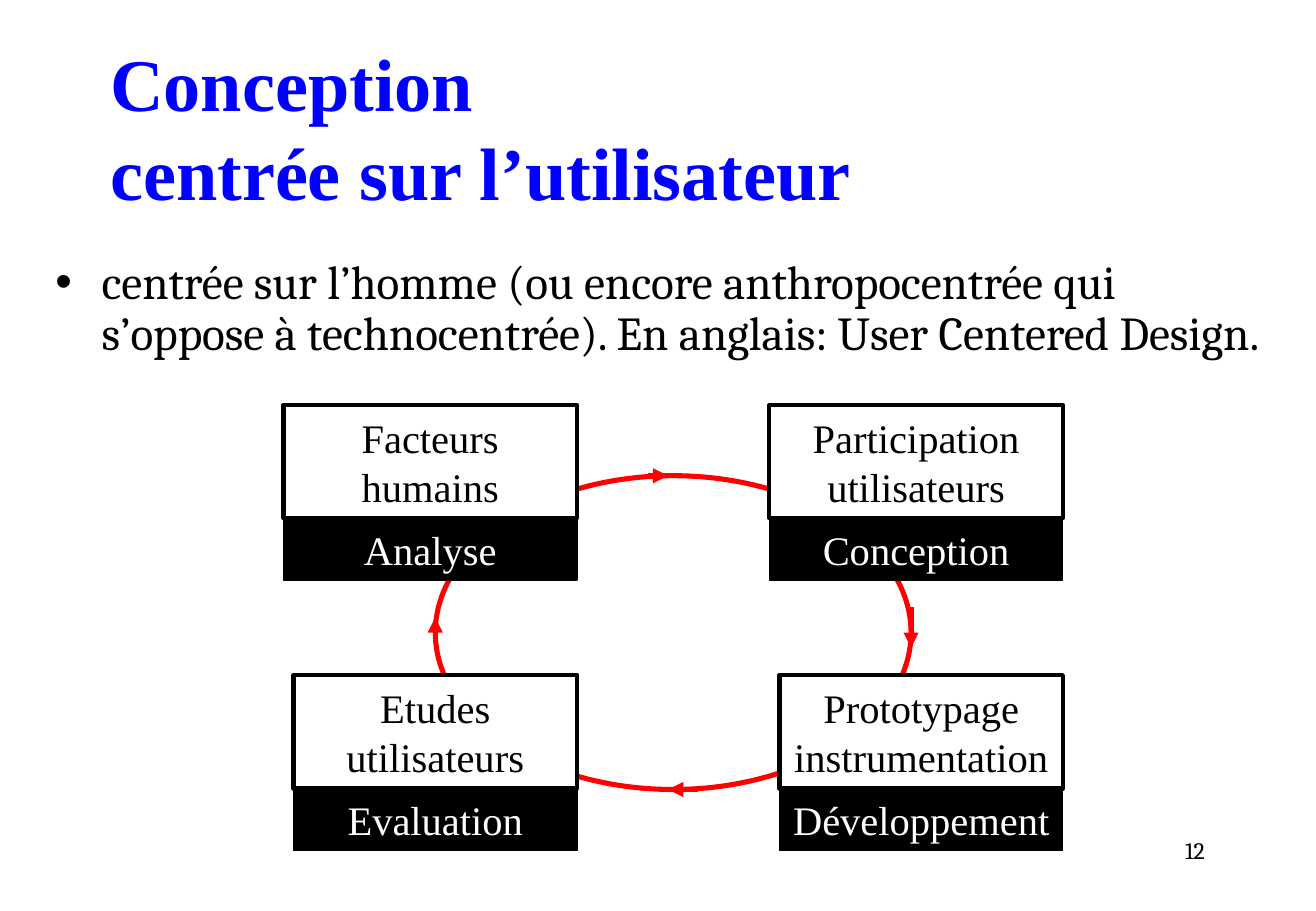
from lxml import etree
from pptx import Presentation
from pptx import util as u
from pptx.dml.color import RGBColor
from pptx.enum import shapes, text
from pptx.oxml.ns import qn

SERIF, BODY = "Times New Roman", "Cambria"
BLACK, WHITE, BLUE, RED = "000000", "FFFFFF", "0000FF", "FF0000"
COLUMNS, ROWS = 130, 90


def colour(value):
    return RGBColor.from_string(value)


class Page:
    """A slide laid out on a grid of COLUMNS by ROWS square cells."""

    def __init__(self, deck):
        self.slide = deck.slides.add_slide(deck.slide_layouts[6])
        self.column = deck.slide_width / COLUMNS
        self.row = deck.slide_height / ROWS

    def place(self, *cells):
        """Turn alternating columns and rows into lengths."""
        units = (self.column, self.row) * (len(cells) // 2)
        return [u.Emu(round(cell * unit)) for cell, unit in zip(cells, units)]

    def set_words(self, shape, words, size, font, ink, align, bold=False):
        frame = shape.text_frame
        frame.word_wrap = True
        frame.text = words
        for para in frame.paragraphs:
            para.alignment = align
            for span in para.runs:
                span.font.size = u.Pt(size)
                span.font.name = font
                span.font.bold = bold
                span.font.color.rgb = colour(ink)
        return frame

    def text(self, cells, words, size, font, ink=BLACK,
             align=text.PP_ALIGN.LEFT, bold=False):
        box = self.slide.shapes.add_textbox(*self.place(*cells))
        return self.set_words(box, words, size, font, ink, align, bold)

    def shape(self, kind, cells, line, width, fill=None):
        shape = self.slide.shapes.add_shape(kind, *self.place(*cells))
        shape.shadow.inherit = False
        if fill:
            shape.fill.solid()
            shape.fill.fore_color.rgb = colour(fill)
        else:
            shape.fill.background()
        shape.line.color.rgb = colour(line)
        shape.line.width = u.Pt(width)
        return shape

    def label(self, cells, words, fill, ink, width):
        box = self.shape(shapes.MSO_SHAPE.RECTANGLE, cells, BLACK, width, fill)
        frame = self.set_words(box, words, 24, SERIF, ink, text.PP_ALIGN.CENTER)
        frame.vertical_anchor = text.MSO_ANCHOR.MIDDLE
        frame.margin_left = frame.margin_right = u.Inches(0.05)

    def stage(self, left, top, width, activity, phase):
        """A white activity box standing on its black phase label."""
        height = 11.2
        self.label((left, top + height, width, 6.1), phase, BLACK, WHITE, 0.75)
        self.label((left, top, width, height), activity, WHITE, BLACK, 2.5)

    def arrow(self, *cells):
        connector = self.slide.shapes.add_connector(
            shapes.MSO_CONNECTOR.STRAIGHT, *self.place(*cells))
        connector.line.color.rgb = colour(RED)
        connector.line.width = u.Pt(3)
        properties = connector._element.spPr
        etree.SubElement(properties.find(qn("a:ln")), qn("a:tailEnd"), type="triangle")
        etree.SubElement(properties, qn("a:effectLst"))

    def bullet(self, para, indent):
        properties = para._p.get_or_add_pPr()
        properties.set("marL", str(u.Inches(indent)))
        properties.set("indent", str(-u.Inches(indent)))
        etree.SubElement(properties, qn("a:buFont"), typeface="Arial")
        etree.SubElement(properties, qn("a:buChar"), char="•")


def main():
    deck = Presentation()
    deck.slide_width, deck.slide_height = u.Inches(10.83), u.Inches(7.5)
    page = Page(deck)

    page.text((93.1, 82, 27.1, 6), "12", 14, BODY, align=text.PP_ALIGN.RIGHT)
    title = page.text((9.7, 5, 117.3, 15), "Conception \vcentrée sur l’utilisateur",
                      44, SERIF, BLUE, bold=True)
    title.vertical_anchor = text.MSO_ANCHOR.MIDDLE

    definition = page.text(
        (4.3, 25, 121.7, 19),
        "centrée sur l’homme (ou encore anthropocentrée qui s’oppose à "
        "technocentrée). En anglais: User Centered Design.", 28, BODY).paragraphs[0]
    definition.line_spacing = 0.9
    definition.space_before = u.Pt(5.6)
    page.bullet(definition, 0.38)

    left, top, width, height = cycle = 43, 47, 47, 31
    right, bottom = left + width, top + height
    page.shape(shapes.MSO_SHAPE.OVAL, cycle, RED, 3)

    upper, lower = 40, 66.7
    for stage in (
        (28, upper, 29, "Facteurs\nhumains", "Analyse"),
        (76, upper, 29, "Participation\nutilisateurs", "Conception"),
        (77, lower, 28, "Prototypage\ninstrumentation", "Développement"),
        (29, lower, 28, "Etudes\nutilisateurs", "Evaluation"),
    ):
        page.stage(*stage)

    for ends in ((64, top, 66, top), (right, 60, right, 64),
                 (69, bottom, 66, bottom), (left, 63, left, 61)):
        page.arrow(*ends)

    deck.save("out.pptx")


if __name__ == "__main__":
    main()
